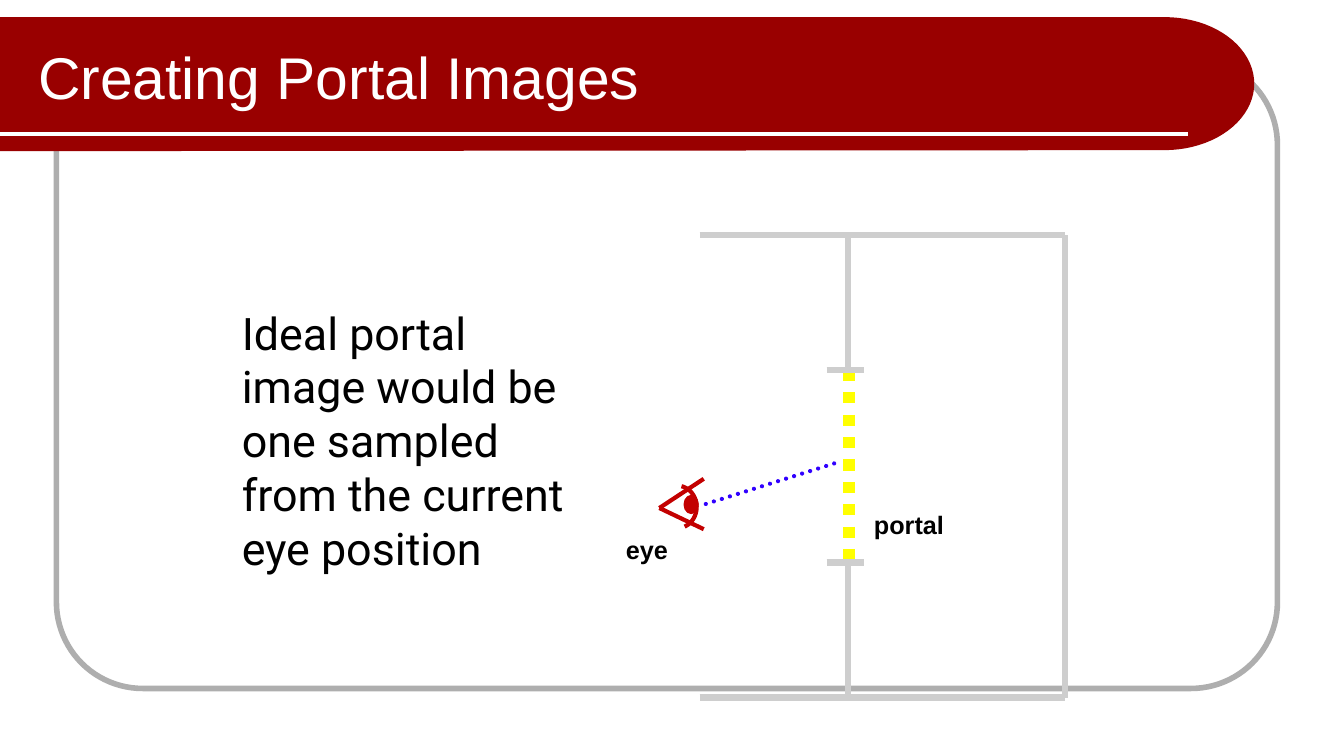
"""Build the slide on creating portal images."""
from math import cos, radians, sin
from lxml.etree import SubElement
from pptx import Presentation
from pptx.dml.color import RGBColor
from pptx.enum.dml import MSO_LINE
from pptx.enum.shapes import MSO_CONNECTOR, MSO_SHAPE
from pptx.enum.text import MSO_ANCHOR, MSO_AUTO_SIZE
from pptx.oxml.ns import qn
from pptx.util import Inches, Pt

WHITE, BLACK, RED, EYE = "FFFFFF", "000000", "990000", "C30000"
LEFT, WALL, BACK = 6.94, 8.41, 10.56
ROOF, TOP, BASE, FLOOR = 2.33, 3.67, 5.58, 6.92

HEAD = {"name": "Arial", "size": Pt(42), "bold": False}
LABEL = {"name": "Arial", "size": Pt(18), "bold": True}
BODY = {"name": "Roboto", "size": Pt(32), "bold": False}
TITLE = ("Creating Portal Images", (0.28, 0.25, 10.38, 1), HEAD, WHITE,
         {"word_wrap": True, "vertical_anchor": MSO_ANCHOR.MIDDLE})
FIT = {"word_wrap": False, "auto_size": MSO_AUTO_SIZE.SHAPE_TO_FIT_TEXT}
TEXTS = [
    ("portal", (8.57, 5, 0.9, 0.4), LABEL, BLACK, FIT),
    ("eye", (6.11, 5.25, 0.62, 0.4), LABEL, BLACK, FIT),
    ("Ideal portal image would be one sampled from the current eye position",
     (2.3, 2.98, 3.63, 2.79), BODY, BLACK, FIT | {"word_wrap": True}),
]
ROOM = [
    (LEFT, FLOOR, BACK, FLOOR), (WALL, FLOOR, WALL, BASE),
    (WALL, 3.75, WALL, ROOF), (LEFT, ROOF, BACK, ROOF),
    (BACK, FLOOR, BACK, ROOF),
]
PORTAL = (8.42, TOP, 8.42, BASE)
CAPS = [(8.2, y, 8.57, y) for y in (BASE, TOP)]
LIDS = [(6.98, 4.75, 6.54, 5.04), (6.54, 5.04, 6.98, 5.25)]
SIGHT = (7, 5, 8.33, 4.58)

deck = Presentation()
deck.slide_width, deck.slide_height = Inches(13.33), Inches(7.5)
slide = deck.slides.add_slide(deck.slide_layouts[6])
shapes = slide.shapes


def paint(part, color):
    """Give a fill or a font color a hex value."""
    part.rgb = RGBColor.from_string(color)


def style(shape, fill=None, line=None, width=1):
    """Set the fill and outline of a shape."""
    shape.shadow.inherit = False
    if fill:
        shape.fill.solid()
        paint(shape.fill.fore_color, fill)
    else:
        shape.fill.background()
    if line:
        paint(shape.line.color, line)
        shape.line.width = Pt(width)
    else:
        shape.line.fill.background()


def stroke(ends, color, width, dash=None, cap=None):
    """Draw a straight line between two points."""
    line = shapes.add_connector(MSO_CONNECTOR.STRAIGHT, *map(Inches, ends))
    paint(line.line.color, color)
    line.line.width = Pt(width)
    if dash:
        line.line.dash_style = dash
    if cap:
        line.line._ln.set("cap", cap)
    SubElement(line._element.spPr, qn("a:effectLst"))


def arc(x, y, wide, high, start, stop, steps=40):
    """List points along part of an ellipse."""
    turns = [radians(start + (stop - start) * i / steps) for i in range(steps + 1)]
    return [(x + wide * cos(t), y + high * sin(t)) for t in turns]


def trace(points, close):
    """Draw a freeform through points in inches."""
    spots = [(Inches(x), Inches(y)) for x, y in points]
    pen = shapes.build_freeform(*spots[0])
    pen.add_line_segments(spots[1:], close=close)
    return pen.convert_to_shape()


def write(text, box, font, color, frame):
    """Add a text box with one paragraph."""
    area = shapes.add_textbox(*map(Inches, box)).text_frame
    for name, value in frame.items():
        setattr(area, name, value)
    run = area.paragraphs[0].add_run()
    run.text = text
    for name, value in font.items():
        setattr(run.font, name, value)
    paint(run.font.color, color)


def main():
    """Draw the parts from back to front."""
    frame = shapes.add_shape(MSO_SHAPE.ROUNDED_RECTANGLE,
                             *map(Inches, (0.56, 0.58, 12.11, 6.25)))
    frame.adjustments[0] = 0.137
    style(frame, line="AEAEAE", width=4)
    curve = arc(11.55, 0.83, 0.89, 0.66, -90, 90)
    style(trace([(0, 0.17), *curve, (0, 1.5)], True), fill=RED)
    stroke((0, 1.33, 11.78, 1.33), WHITE, 3)
    write(*TITLE)

    for ends in ROOM:
        stroke(ends, "CECECE", 4.5)
    stroke(PORTAL, "FFFF00", 8, MSO_LINE.ROUND_DOT)
    for ends in CAPS:
        stroke(ends, "CECECE", 4.5)
    for item in TEXTS:
        write(*item)

    for ends in LIDS:
        stroke(ends, EYE, 3)
    style(trace(arc(6.72, 5.03, 0.19, 0.21, -78, 68), False), line=EYE, width=3)
    pupil = shapes.add_shape(MSO_SHAPE.OVAL, *map(Inches, (6.79, 4.92, 0.13, 0.17)))
    style(pupil, EYE, EYE, 1.5)
    stroke(SIGHT, "3101FF", 3, MSO_LINE.ROUND_DOT, "rnd")
    deck.save("out.pptx")


if __name__ == "__main__":
    main()
